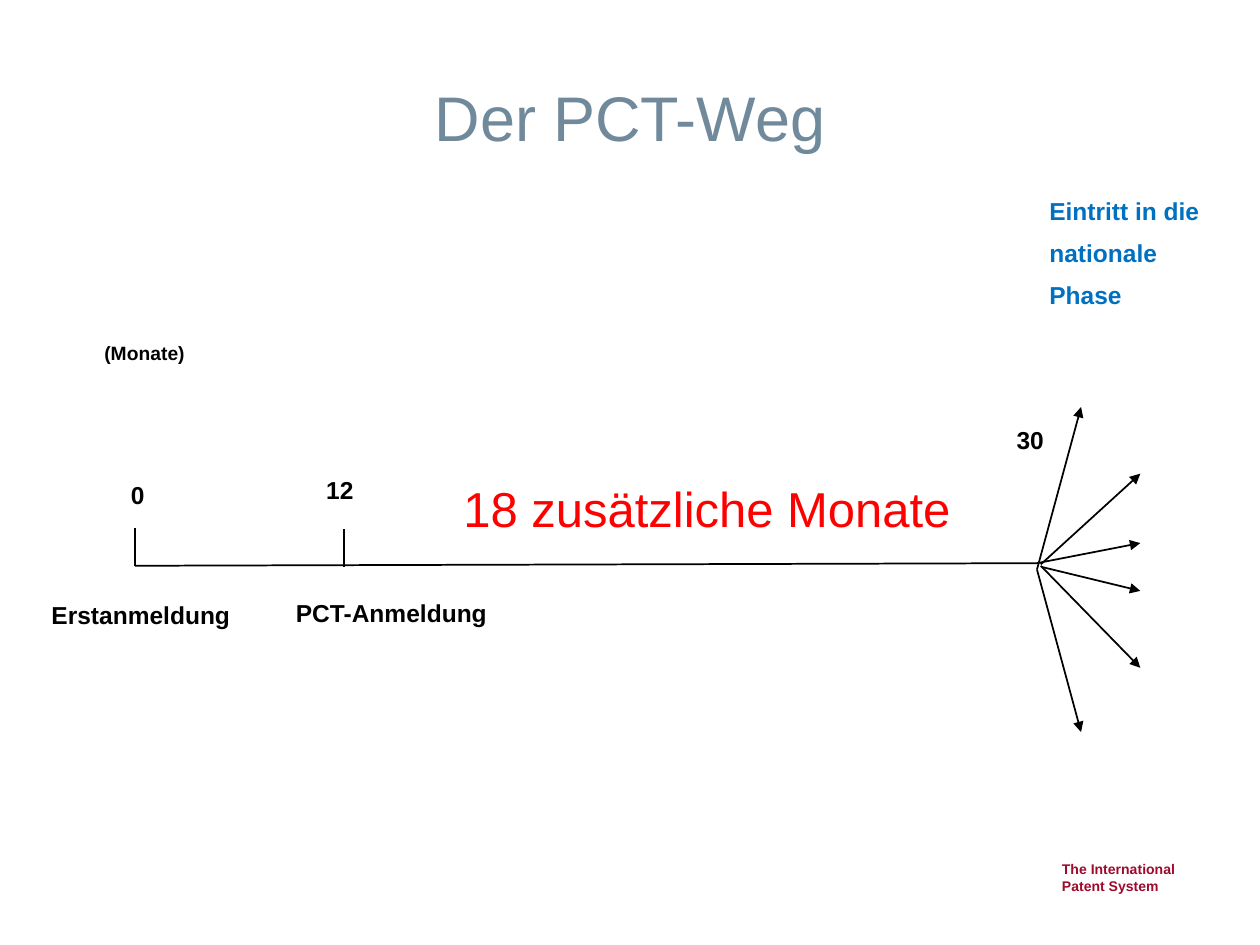
import pptx
import pptx.util
import pptx.dml.color
from pptx.enum.shapes import MSO_CONNECTOR, MSO_SHAPE
from pptx.enum.text import MSO_ANCHOR, PP_ALIGN
from pptx.oxml import parse_xml
from pptx.oxml.ns import nsdecls, qn

THEME = {
    "font": "Arial", "line_width": 1,
    "black": "000000", "white": "FFFFFF", "title": "70899B",
    "blue": "0070C0", "red": "FF0000", "maroon": "9D0A2B",
    "title_size": 36, "span_size": 28, "label_size": 14,
    "unit_size": 11, "footer_size": 8,
}
SLIDE = (10, 7.5)

# All places are percentages of the slide's width and height.
TITLE = ("Der PCT-Weg", (5, 4, 90, 16.67))
LABELS = [  # paragraphs, (left, top, width, height), size, colour
    (["(Monate)"], (7.3, 35.47, 8.7, 8.53), "unit_size", "black"),
    (["PCT-Anmeldung"], (22.5, 62.67, 20.8, 4.53), "label_size", "black"),
    (["12"], (24.9, 49.6, 5.9, 4.67), "label_size", "black"),
    (["30"], (79.7, 44.27, 6, 11.07), "label_size", "black"),
    (["Erstanmeldung"], (3.1, 62.8, 16.5, 9.2), "label_size", "black"),
    (["Eintritt in die", "nationale", "Phase"], (82.3, 20.13, 14.6, 14),
     "label_size", "blue"),
    (["0"], (9.4, 50.13, 5.4, 4.67), "label_size", "black"),
]
NOTES = [
    (["18 zusätzliche Monate"], (35.8, 50, 42.5, 7.6), "span_size", "red"),
    (["The International \vPatent System"], (83.3, 90.4, 15.6, 4.4),
     "footer_size", "maroon"),
]
TIMELINE = [  # axis, then the ticks for months 0 and 12
    ((10.7, 59.87), (82.3, 59.6)),
    ((10.7, 59.87), (10.7, 55.87)),
    ((27.3, 60), (27.3, 56)),
]
NATIONAL_PHASE = [  # arrows fanning out at month 30, from top to bottom
    ((82.3, 60.27), (85.8, 43.07)),
    ((82.6, 59.73), (90.5, 50.13)),
    ((82.3, 59.6), (90.5, 57.47)),
    ((82.7, 60), (90.5, 62.53)),
    ((82.6, 59.87), (90.5, 70.67)),
    ((82.3, 60.27), (85.8, 77.47)),
]


def place(*shares):
    """Turn alternating width and height percentages into lengths."""
    return [pptx.util.Inches(share * SLIDE[i % 2] / 100)
            for i, share in enumerate(shares)]


def rgb(name):
    return pptx.dml.color.RGBColor.from_string(THEME[name])


def style(p, size, color, bold):
    values = {"name": THEME["font"], "size": pptx.util.Pt(THEME[size]), "bold": bold}
    for key, value in values.items():
        setattr(p.font, key, value)
    p.font.color.rgb = rgb(color)


def write(sp, lines, size, color, bold):
    tf = sp.text_frame
    tf.word_wrap = True
    tf.vertical_anchor = MSO_ANCHOR.TOP
    for i, line in enumerate(lines):
        p = tf.paragraphs[0] if i == 0 else tf.add_paragraph()
        p.text = line
        p.alignment = PP_ALIGN.LEFT
        if i:
            p.space_before = pptx.util.Pt(THEME[size] / 2)
        style(p, size, color, bold)


def add_title(s, text, box):
    sp = s.shapes.title
    sp.left, sp.top, sp.width, sp.height = place(*box)
    sp.text_frame.text = text
    sp.text_frame.vertical_anchor = MSO_ANCHOR.MIDDLE
    p = sp.text_frame.paragraphs[0]
    p.alignment = PP_ALIGN.CENTER
    style(p, "title_size", "title", False)


def add_label(s, lines, box, size, color):
    sp = s.shapes.add_shape(MSO_SHAPE.RECTANGLE, *place(*box))
    sp.shadow.inherit = False
    sp.fill.solid()
    sp.fill.fore_color.rgb = rgb("white")
    sp.line.fill.background()
    write(sp, lines, size, color, True)


def add_line(s, start, end, arrow=False):
    line = s.shapes.add_connector(MSO_CONNECTOR.STRAIGHT, *place(*start, *end))
    line.line.color.rgb = rgb("black")
    line.line.width = pptx.util.Pt(THEME["line_width"])
    spPr = line._element.spPr
    if arrow:
        spPr.find(qn("a:ln")).append(
            parse_xml(f'<a:tailEnd {nsdecls("a")} type="triangle"/>'))
    spPr.append(parse_xml(f'<a:effectLst {nsdecls("a")}/>'))


def main():
    prs = pptx.Presentation()
    prs.slide_width, prs.slide_height = map(pptx.util.Inches, SLIDE)
    s = prs.slides.add_slide(prs.slide_layouts[5])
    add_title(s, *TITLE)
    for label in LABELS:
        add_label(s, *label)
    for start, end in TIMELINE:
        add_line(s, start, end)
    for start, end in NATIONAL_PHASE:
        add_line(s, start, end, arrow=True)
    for lines, box, size, color in NOTES:
        sp = s.shapes.add_textbox(*place(*box))
        write(sp, lines, size, color, size == "footer_size")
    prs.save("out.pptx")


if __name__ == "__main__":
    main()
